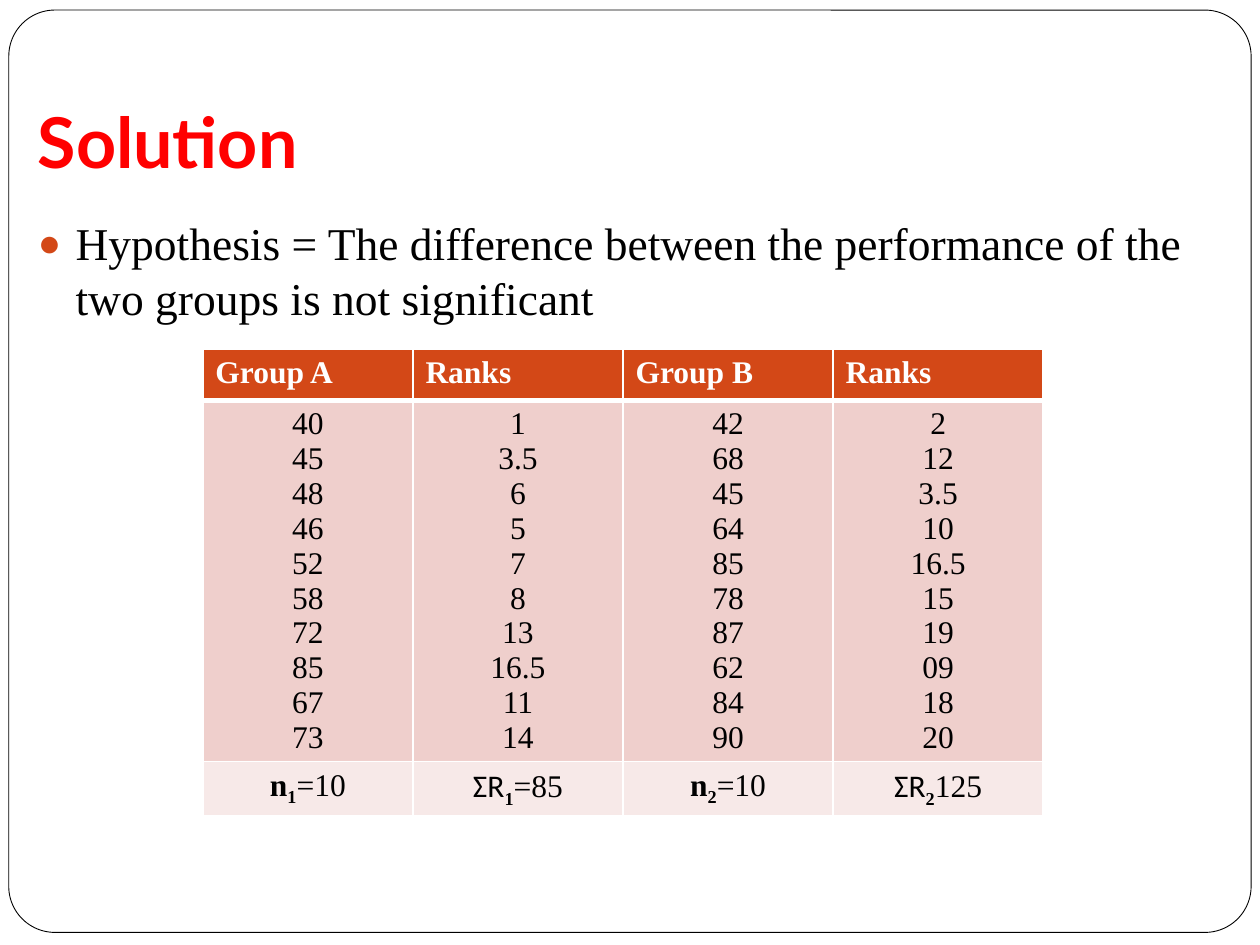
from lxml.etree import SubElement as Sub
from pptx import Presentation
from pptx.dml.color import RGBColor
from pptx.enum.shapes import MSO_SHAPE as Shape
from pptx.enum.text import MSO_ANCHOR as Anchor, MSO_AUTO_SIZE as Fit, PP_ALIGN as Align
from pptx.oxml.ns import qn
from pptx.util import Inches, Pt

SERIF = "Times New Roman"
RED, RUST, PINK, PALE = "FF0000", "D34817", "EFCFCC", "F7E9E8"
BLACK, WHITE = "000000", "FFFFFF"


def tint(code):
    return RGBColor.from_string(code)


def paint(fill, code):
    fill.solid()
    fill.fore_color.rgb = tint(code)


def apply(item, form):
    for name, value in form.items():
        setattr(item, name, value)


class Deck:
    """Holds the style and the slide; lengths are cells of a 100 x 75 grid."""
    cell = Inches(0.1)

    def __init__(self):
        self.file = Presentation()
        self.file.slide_width = 100 * self.cell
        self.file.slide_height = 75 * self.cell
        self.slide = self.file.slides.add_slide(self.file.slide_layouts[1])
        self.shapes = self.slide.shapes

    def box(self, *grid):
        return [round(n * self.cell) for n in grid]

    def place(self, shape, grid):
        apply(shape, dict(zip(("left", "top", "width", "height"), self.box(*grid))))

    def text(self, para, words, color=BLACK, base=0, gap=0, **form):
        run = para.add_run()
        run.text = words
        apply(run.font, {"name": SERIF, "size": Pt(18), "bold": False, **form})
        run.font.color.rgb = tint(color)
        props = run.font._element
        if base:
            props.set("baseline", str(base))
        if gap:
            props.set("spc", str(gap))

    def frame(self, grid, bend):
        shape = self.shapes.add_shape(Shape.ROUNDED_RECTANGLE, *self.box(*grid))
        shape.adjustments[0] = bend
        shape.shadow.inherit = False
        paint(shape.fill, WHITE)
        shape.line.color.rgb = tint(BLACK)
        shape.line.width = Pt(0.5)
        self.shapes._spTree.insert(2, shape._element)

    def title(self, words, grid, **form):
        shape = self.shapes.title
        self.place(shape, grid)
        apply(shape.text_frame, {"vertical_anchor": Anchor.BOTTOM, "word_wrap": True,
                                 "auto_size": Fit.NONE, "margin_bottom": self.cell})
        para = shape.text_frame.paragraphs[0]
        para.alignment = Align.LEFT
        self.text(para, words, **form)

    def bullets(self, lines, grid, **form):
        shape = self.slide.placeholders[1]
        self.place(shape, grid)
        body = shape.text_frame
        apply(body, {"word_wrap": True, "auto_size": Fit.NONE, "margin_top": Inches(0.13)})
        for i, line in enumerate(lines):
            para = body.add_paragraph() if i else body.paragraphs[0]
            para.space_before = Pt(5.8 if i else 0)
            props = para._p.get_or_add_pPr()
            props.set("marL", str(Inches(0.3)))
            props.set("indent", str(-Inches(0.3)))
            Sub(Sub(props, qn("a:buClr")), qn("a:srgbClr"), val=RUST)
            Sub(props, qn("a:buSzPct"), val="85000")
            Sub(props, qn("a:buChar"), char="●")
            self.text(para, line, **form)

    def edge(self, cell, low):
        props = cell._tc.get_or_add_tcPr()
        for side in "LRTB":
            width = low if side == "B" else 1
            line = Sub(props, qn("a:ln" + side), w=str(Pt(width)))
            Sub(Sub(line, qn("a:solidFill")), qn("a:srgbClr"), val=WHITE)

    def table(self, rows, fills, grid):
        wide = len(rows[0])
        table = self.shapes.add_table(len(rows), wide, *self.box(*grid)).table
        apply(table, {"first_row": False, "horz_banding": False})
        for r, row in enumerate(rows):
            for c, paras in enumerate(row):
                cell = table.cell(r, c)
                self.edge(cell, 1 if r else 3)
                paint(cell.fill, fills[r])
                body = cell.text_frame
                for i, runs in enumerate(paras):
                    para = body.add_paragraph() if i else body.paragraphs[0]
                    para.alignment = Align.CENTER if r else Align.LEFT
                    for words, form in runs:
                        self.text(para, words, **form)


def total(head, form, index, tail):
    """One paragraph: a symbol, its subscript and its value."""
    sub = {"bold": True, "base": -25000, "gap": -50}
    return [[(head, form), (index, sub), (tail, {})]]


deck = Deck()

# Frame, title and hypothesis
deck.frame((0.7, 0.8, 98.6, 73.2), 0.05)
deck.title("Solution", (2, 3, 93, 12.5), name="Lato", size=Pt(40), bold=True, color=RED)
deck.bullets(["Hypothesis = The difference between the performance of the "
              "two groups is not significant"], (2, 15.8, 93, 50), size=Pt(26))

# Scores and ranks
heads = ["Group A", "Ranks", "Group B", "Ranks"]
scores = ["40 45 48 46 52 58 72 85 67 73",
          "1 3.5 6 5 7 8 13 16.5 11 14",
          "42 68 45 64 85 78 87 62 84 90",
          "2 12 3.5 10 16.5 15 19 09 18 20"]
count, ranks = {"bold": True, "gap": -50}, {"name": "Calibri"}
deck.table(
    [[[[(head, {"bold": True, "color": WHITE})]] for head in heads],
     [[[(mark, {})] for mark in col.split()] for col in scores],
     [total("n", count, "1", "=10"), total("ƩR", ranks, "1", "=85"),
      total("n", count, "2", "=10"), total("ƩR", ranks, "2", "125")]],
    [RUST, PINK, PALE], (16.1, 27.7, 66.7, 12.2))

deck.file.save("out.pptx")
